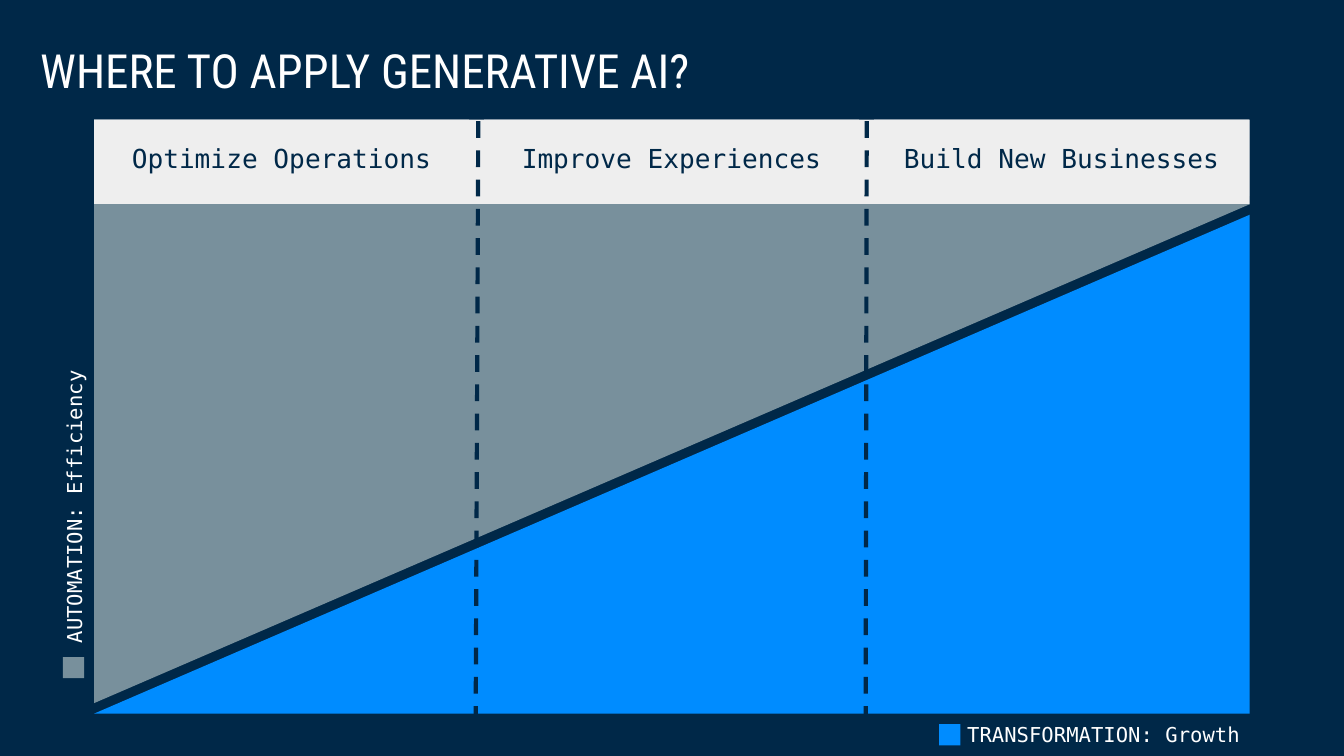
from collections import namedtuple
from dataclasses import dataclass

from lxml.etree import SubElement
from pptx import Presentation
from pptx.dml.color import RGBColor
from pptx.enum.dml import MSO_LINE
from pptx.enum.shapes import MSO_CONNECTOR, MSO_SHAPE as SHAPE
from pptx.enum.text import MSO_ANCHOR as ANCHOR, PP_ALIGN as ALIGN
from pptx.oxml.ns import qn
from pptx.util import Cm, Pt

Box = namedtuple("Box", "left top width height")  # centimetres


@dataclass(frozen=True)
class Theme:
    navy: str = "002848"
    blue: str = "008CFF"
    gray: str = "78909C"
    pale: str = "EEEEEE"
    white: str = "FFFFFF"
    title_font: str = "Roboto Condensed"
    body_font: str = "DejaVu Sans Mono"
    title_size: float = 25.2
    header_size: float = 14
    label_size: float = 11
    line_width: float = 2.25


THEME = Theme()
COLUMNS = ("Optimize Operations", "Improve Experiences", "Build New Businesses")


def lengths(box):
    return [Cm(value) for value in box]


def write(shape, text, *, size, color, font=THEME.body_font,
          align=ALIGN.LEFT, anchor=ANCHOR.TOP):
    frame = shape.text_frame
    frame.word_wrap = True
    frame.vertical_anchor = anchor
    frame.margin_left = frame.margin_right = Cm(0.25)
    frame.margin_top = frame.margin_bottom = Cm(0.25)
    para = frame.paragraphs[0]
    para.alignment = align
    span = para.add_run()
    span.text = text
    span.font.name = font
    span.font.size = Pt(size)
    span.font.color.rgb = RGBColor.from_string(color)


def add_filled(page, box, color, kind=SHAPE.RECTANGLE):
    shape = page.shapes.add_shape(kind, *lengths(box))
    shape.shadow.inherit = False
    shape.fill.solid()
    shape.fill.fore_color.rgb = RGBColor.from_string(color)
    shape.line.fill.background()
    return shape


def add_triangle(page, box, color, rotation=0):
    """Right triangle, mirrored so its right angle is at the lower right."""
    triangle = add_filled(page, box, color, SHAPE.RIGHT_TRIANGLE)
    triangle.element.spPr.get_or_add_xfrm().set("flipH", "1")
    triangle.rotation = rotation


def add_divider(page, start, end):
    line = page.shapes.add_connector(MSO_CONNECTOR.STRAIGHT,
                                     *lengths(start + end))
    line.line.color.rgb = RGBColor.from_string(THEME.navy)
    line.line.width = Pt(THEME.line_width)
    line.line.dash_style = MSO_LINE.DASH
    SubElement(line.element.spPr, qn("a:effectLst"))


def add_title(page, box):
    title = page.shapes.title
    title.left, title.top, title.width, title.height = lengths(box)
    write(title, "WHERE TO APPLY GENERATIVE AI?", size=THEME.title_size,
          color=THEME.white, font=THEME.title_font, anchor=ANCHOR.MIDDLE)


def add_wedges(page, box):
    """Two triangles, offset vertically to leave a diagonal gap."""
    gap = 0.2
    height = box.height - gap
    add_triangle(page, box._replace(top=box.top + gap, height=height),
                 THEME.blue)
    add_triangle(page, box._replace(height=height), THEME.gray, rotation=180)


def add_headers(page, box):
    pitch = 7.37
    for index, name in enumerate(COLUMNS):
        cell = add_filled(page, Box(box.left + index * pitch, box.top,
                                    7.09, 1.45), THEME.pale)
        write(cell, name, size=THEME.header_size, color=THEME.navy,
              align=ALIGN.CENTER, anchor=ANCHOR.MIDDLE)


def add_chart_area(page, box):
    header = 1.6
    add_filled(page, box._replace(height=header), THEME.pale)
    add_wedges(page, box._replace(top=box.top + header,
                                  height=box.height - header))
    add_headers(page, box)
    for top_x, bottom_x in ((7.26, 7.21), (14.6, 14.58)):
        add_divider(page, (box.left + top_x, box.top + 0.03),
                    (box.left + bottom_x, box.top + box.height + 0.03))


def add_legend(page, text, box, swatch, color, rotation=0):
    label = page.shapes.add_textbox(*lengths(box))
    label.rotation = rotation
    write(label, text, size=THEME.label_size, color=THEME.white)
    add_filled(page, swatch, color)


def main():
    deck = Presentation()
    deck.slide_width, deck.slide_height = Cm(25.4), Cm(14.29)
    page = deck.slides.add_slide(deck.slide_layouts.get_by_name("Title Only"))
    page.background.fill.solid()
    page.background.fill.fore_color.rgb = RGBColor.from_string(THEME.navy)

    add_title(page, Box(0.51, 0.51, 24.38, 1.6))
    add_chart_area(page, Box(1.78, 2.26, 21.84, 11.23))
    add_legend(page, "AUTOMATION: Efficiency", Box(-2.92, 7.7, 8.56, 0.86),
               Box(1.19, 12.42, 0.4, 0.4), THEME.gray, rotation=270)
    add_legend(page, "TRANSFORMATION: Growth", Box(18.03, 13.41, 8.56, 0.86),
               Box(17.75, 13.69, 0.4, 0.4), THEME.blue)
    deck.save("out.pptx")


if __name__ == "__main__":
    main()
